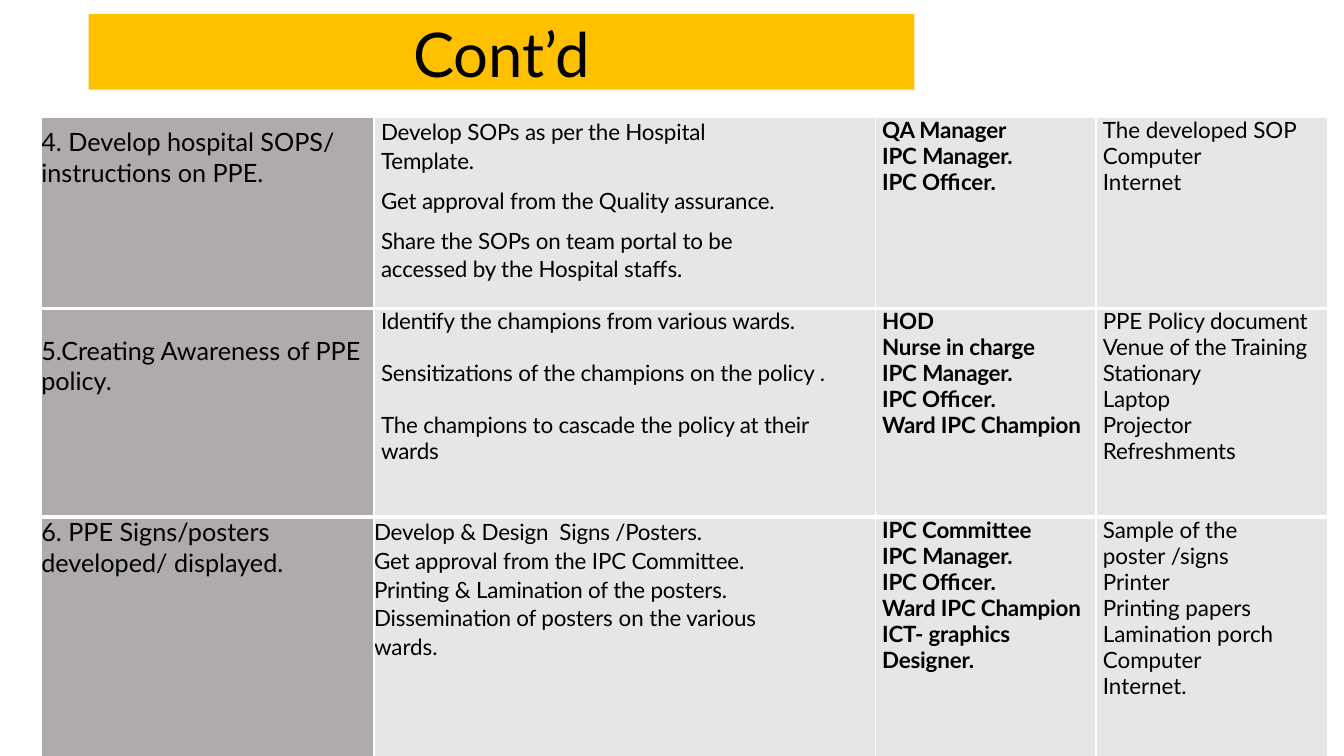
from dataclasses import dataclass

import pptx
import pptx.dml.color
import pptx.enum.text
import pptx.oxml
import pptx.oxml.ns
import pptx.util

Inches, Pt = pptx.util.Inches, pptx.util.Pt
ANCHOR = pptx.enum.text.MSO_ANCHOR


@dataclass(frozen=True)
class Theme:
    font: str = "Lato"
    ink: str = "000000"
    gold: str = "FFC000"
    dark: str = "AFABAB"
    light: str = "E7E6E6"
    rule: str = "FFFFFF"
    title: int = 44
    task: int = 18
    body: int = 16


@dataclass(frozen=True)
class Cell:
    """Paragraphs of one cell; a paragraph is text or (text, tracking) runs."""
    lines: list
    left: float = 0.07
    right: float = 0
    top: float = 0
    lead: object = Pt(18.6)
    gap: float = 0
    bold: bool = False
    track: int = 0
    size: int = Theme.body
    fill: str = Theme.light


def task(text, top=0):
    return Cell([text], left=0, top=top, lead=None, size=Theme.task, fill=Theme.dark)


def steps(*lines, **style):
    return Cell(lines, track=-10, **style)


def staff(*lines):
    return Cell(lines, bold=True, track=-10)


def tools(*lines, **style):
    return Cell(lines, **style)


MANAGER = [("IPC ", -10), ("Manager.", -20)]
OFFICER = "IPC Officer."
WARD = "Ward IPC Champion"

PLAN = [
    [task("4. Develop hospital SOPS/ instructions on PPE.", 0.1),
     steps("Develop SOPs as per the Hospital Template.",
           "Get approval from the Quality assurance.",
           "Share the SOPs on team portal to be accessed by the Hospital staffs.",
           right=0.8, lead=1.07, gap=8.1),
     staff("QA Manager", MANAGER, OFFICER),
     tools("The developed SOP", "Computer", "Internet")],
    [task("5.Creating Awareness of PPE policy.", 0.27),
     steps("Identify the champions from various wards.",
           "Sensitizations of the champions on the policy .",
           "The champions to cascade the policy at their wards",
           right=0.2, gap=18.6),
     staff("HOD", "Nurse in charge", MANAGER, OFFICER, WARD),
     tools("PPE Policy document", "Venue of the Training", "Stationary",
           "Laptop", "Projector", "Refreshments", track=-10)],
    [task("6. PPE Signs/posters developed/ displayed."),
     steps("Develop & Design  Signs /Posters.",
           "Get approval from the IPC Committee.",
           "Printing & Lamination of the posters.",
           [("Dissemination of posters ", -10), ("on ", 0),
            ("the various ", -10), ("wards.", 0)],
           left=0, right=0.8, lead=1.07),
     staff("IPC Committee", MANAGER, OFFICER, WARD, "ICT- graphics Designer."),
     tools("Sample of the poster /signs", "Printer", "Printing papers",
           "Lamination porch", "Computer", "Internet.")],
]
COLS = [3.3, 4.97, 2.19, 2.3]
ROWS = [1.9, 2.07, 2.75]


class Deck:
    def __init__(self, theme):
        self.theme = theme
        self.prs = pptx.Presentation()
        self.prs.slide_width = Inches(13.33)
        self.prs.slide_height = Inches(7.5)
        self.slide = self.prs.slides.add_slide(self.prs.slide_layouts[5])

    def paint(self, fill, tint):
        fill.solid()
        fill.fore_color.rgb = pptx.dml.color.RGBColor.from_string(tint)

    def run(self, para, text, size, bold=False, track=0):
        run = para.add_run()
        run.text = text
        font = run.font
        font.name, font.size, font.bold = self.theme.font, Pt(size), bold
        self.paint(font.fill, self.theme.ink)
        if track:
            run._r.get_or_add_rPr().set("spc", str(track))

    def title(self, text, left, top, width, height):
        box = self.slide.shapes.title
        box.left, box.top = Inches(left), Inches(top)
        box.width, box.height = Inches(width), Inches(height)
        self.paint(box.fill, self.theme.gold)
        frame = box.text_frame
        frame.margin_left = frame.margin_right = frame.margin_bottom = 0
        frame.margin_top = Inches(0.01)
        frame.word_wrap = True
        frame.auto_size = pptx.enum.text.MSO_AUTO_SIZE.NONE
        frame.vertical_anchor = ANCHOR.MIDDLE
        para = frame.paragraphs[0]
        para.alignment = pptx.enum.text.PP_ALIGN.CENTER
        self.run(para, text, self.theme.title)

    def edges(self, cell, above, below):
        """Draw the cell borders; above and below are widths in points."""
        props = cell._tc.get_or_add_tcPr()
        sides = [("L", 1), ("R", 1), ("T", above), ("B", below)]
        for spot, (side, width) in enumerate(sides):
            props.insert(spot, pptx.oxml.parse_xml(
                f'<a:ln{side} {pptx.oxml.ns.nsdecls("a")} w="{Pt(width)}">'
                f'<a:solidFill><a:srgbClr val="{self.theme.rule}"/></a:solidFill>'
                f'</a:ln{side}>'))

    def cell(self, cell, data):
        self.paint(cell.fill, data.fill)
        cell.margin_left, cell.margin_right = Inches(data.left), Inches(data.right)
        cell.margin_top, cell.margin_bottom = Inches(data.top), 0
        cell.vertical_anchor = ANCHOR.TOP
        frame = cell.text_frame
        for spot, line in enumerate(data.lines):
            para = frame.add_paragraph() if spot else frame.paragraphs[0]
            para.line_spacing = data.lead
            if spot and data.gap:
                para.space_before = Pt(data.gap)
            runs = [(line, data.track)] if isinstance(line, str) else line
            for text, track in runs:
                self.run(para, text, data.size, data.bold, track)

    def table(self, plan, left, top, cols, rows):
        table = self.slide.shapes.add_table(
            len(rows), len(cols), Inches(left), Inches(top),
            Inches(sum(cols)), Inches(sum(rows))).table
        table.first_row = table.horz_banding = False
        for col, width in zip(table.columns, cols):
            col.width = Inches(width)
        for row, height in zip(table.rows, rows):
            row.height = Inches(height)
        last = len(rows) - 1
        for r, line in enumerate(plan):
            for c, data in enumerate(line):
                cell = table.cell(r, c)
                self.cell(cell, data)
                self.edges(cell, 3 if r else 1, 3 if r < last else 1)


def main():
    deck = Deck(Theme())
    deck.title("Cont’d", 0.88, 0.14, 8.19, 0.75)
    deck.table(PLAN, 0.41, 1.16, COLS, ROWS)
    deck.prs.save("out.pptx")


if __name__ == "__main__":
    main()
